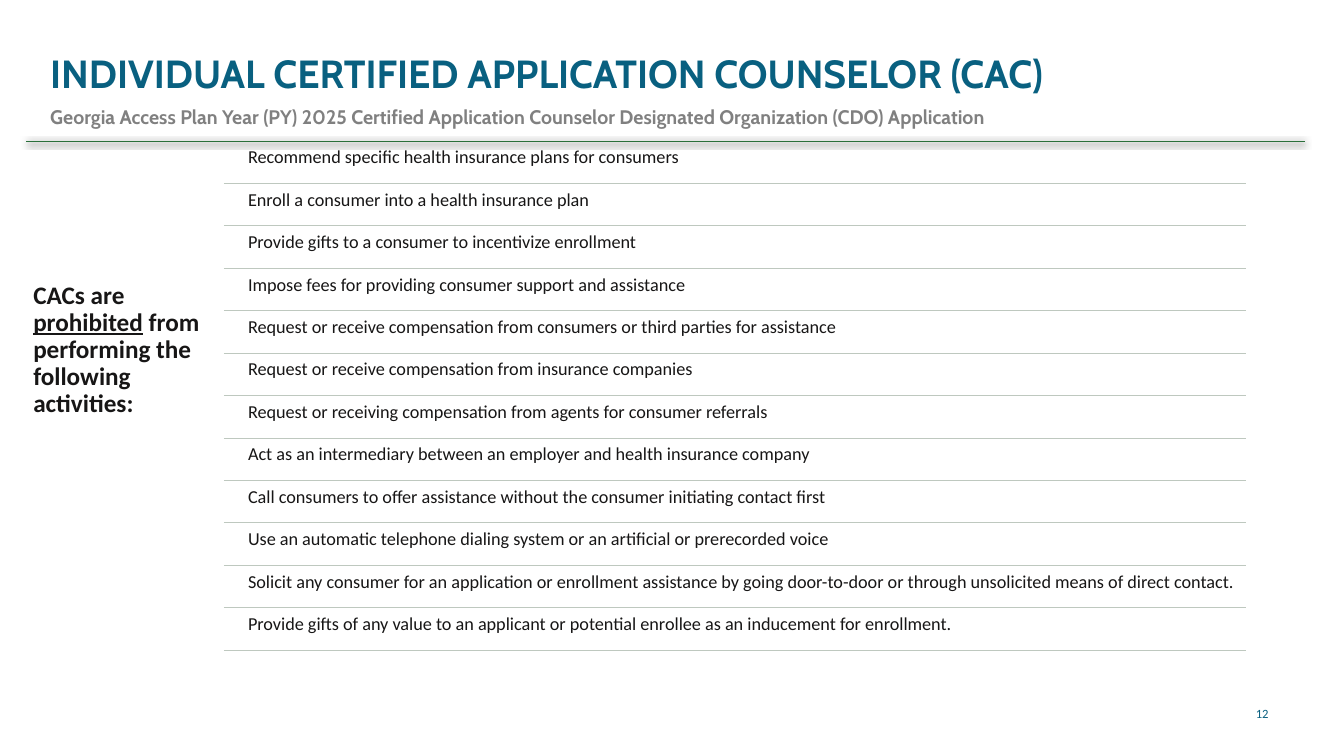
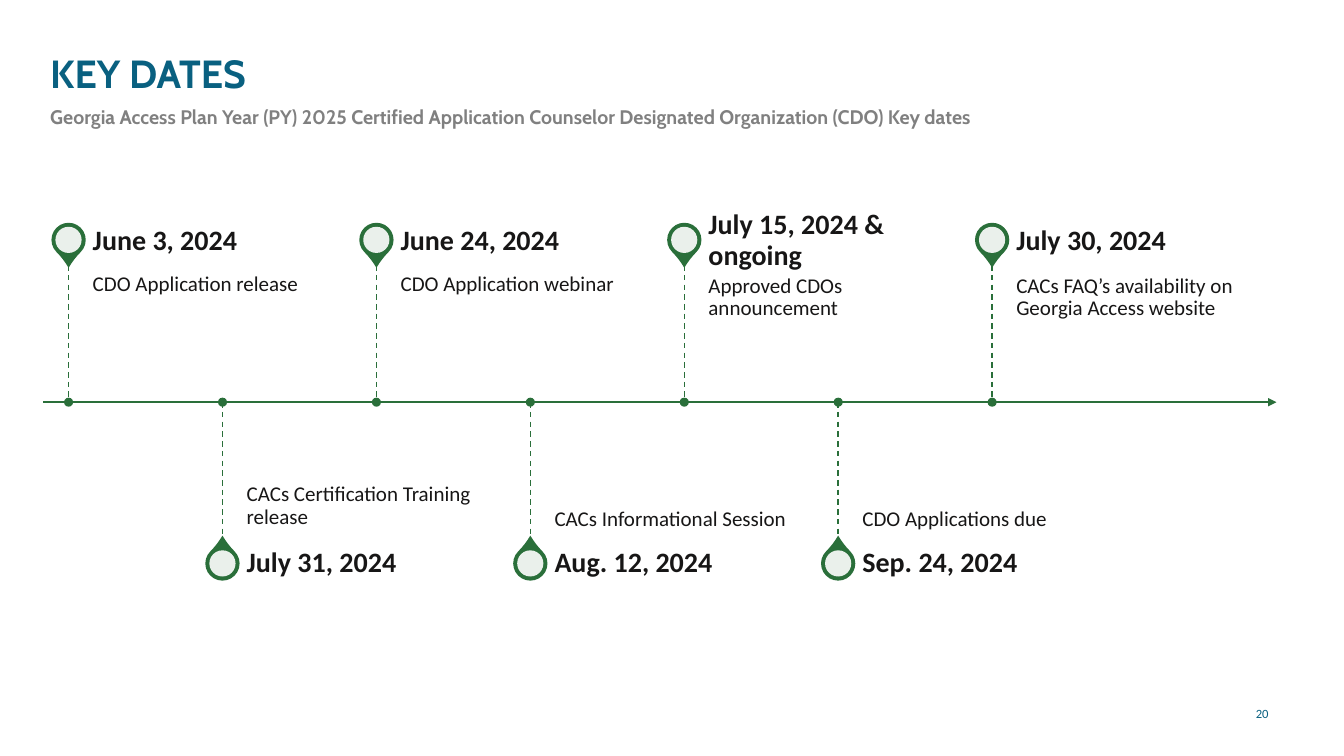
from lxml import etree
from pptx import Presentation
from pptx.dml.color import RGBColor
from pptx.enum.dml import MSO_LINE
from pptx.enum.shapes import MSO_CONNECTOR, MSO_SHAPE
from pptx.enum.text import MSO_ANCHOR, PP_ALIGN
from pptx.oxml.ns import qn
from pptx.util import Inches, Pt

TOP, MIDDLE, BOTTOM = MSO_ANCHOR.TOP, MSO_ANCHOR.MIDDLE, MSO_ANCHOR.BOTTOM
LEFT, RIGHT = PP_ALIGN.LEFT, PP_ALIGN.RIGHT
STRAIGHT, DASH = MSO_CONNECTOR.STRAIGHT, MSO_LINE.DASH
OVAL, TEAR = MSO_SHAPE.OVAL, MSO_SHAPE.TEAR

TEAL, GRAY, GREEN = "096080", "808080", "2A6F3A"
INK, PALE, WHITE = "171616", "BEC8BF", "FFFFFF"
HEAD, BODY = "Cabin", "Calibri"
INSET = (0.1, 0.05, 0.1, 0.05)

PLAN = "Georgia Access Plan Year (PY) 2025 Certified Application Counselor Designated Organization (CDO) "
BANS = [
    "Recommend specific health insurance plans for consumers",
    "Enroll a consumer into a health insurance plan",
    "Provide gifts to a consumer to incentivize enrollment",
    "Impose fees for providing consumer support and assistance",
    "Request or receive compensation from consumers or third parties for assistance",
    "Request or receive compensation from insurance companies",
    "Request or receiving compensation from agents for consumer referrals",
    "Act as an intermediary between an employer and health insurance company",
    "Call consumers to offer assistance without the consumer initiating contact first",
    "Use an automatic telephone dialing system or an artificial or prerecorded voice",
    "Solicit any consumer for an application or enrollment assistance by going "
    "door-to-door or through unsolicited means of direct contact.",
    "Provide gifts of any value to an applicant or potential enrollee as an "
    "inducement for enrollment.",
]
DATES = [
    ("June 3, 2024", "CDO Application release"),
    ("July 31, 2024", "CACs Certification Training release"),
    ("June 24, 2024", "CDO Application webinar"),
    ("Aug. 12, 2024", "CACs Informational Session"),
    ("July 15, 2024 & ongoing", "Approved CDOs announcement"),
    ("Sep. 24, 2024", "CDO Applications due"),
    ("July 30, 2024", "CACs FAQ’s availability on Georgia Access website"),
]
AXIS = 3.99
REACH = 1.36


def rgb(code):
    return RGBColor.from_string(code)


def add_text(slide, box, runs, size, color=INK, font=BODY, bold=False,
             anchor=TOP, inset=INSET, align=LEFT, lead=0.9):
    """Add a one-paragraph text box; runs are (text, underlined) pairs."""
    frame = slide.shapes.add_textbox(*map(Inches, box)).text_frame
    frame.word_wrap = True
    frame.vertical_anchor = anchor
    (frame.margin_left, frame.margin_top,
     frame.margin_right, frame.margin_bottom) = map(Inches, inset)
    para = frame.paragraphs[0]
    para.alignment = align
    para.line_spacing = lead
    for text, under in runs:
        run = para.add_run()
        run.text = text
        run.font.name = font
        run.font.size = Pt(size)
        run.font.bold = bold
        run.font.underline = under
        run.font.color.rgb = rgb(color)


def add_line(slide, start, end, color, width, dash=None):
    """Add a line and return it with its empty effect list."""
    line = slide.shapes.add_connector(STRAIGHT, *map(Inches, start + end))
    line.line.color.rgb = rgb(color)
    line.line.width = Pt(width)
    if dash:
        line.line.dash_style = dash
    effects = etree.SubElement(line._element.spPr, qn("a:effectLst"))
    return line, effects


def add_shade(effects):
    shade = etree.SubElement(effects, qn("a:outerShdw"), blurRad=str(Pt(4.5)),
                             dist=str(Pt(1.5)), dir="5400000", rotWithShape="0")
    black = etree.SubElement(shade, qn("a:srgbClr"), val="000000")
    etree.SubElement(black, qn("a:alpha"), val="63000")


def add_mark(slide, kind, x, y, size, color):
    """Add a borderless shape centred on x, y."""
    mark = slide.shapes.add_shape(
        kind, *map(Inches, (x - size / 2, y - size / 2, size, size)))
    mark.shadow.inherit = False
    mark.fill.solid()
    mark.fill.fore_color.rgb = rgb(color)
    mark.line.fill.background()
    return mark


def add_page(deck, title, topic, number):
    """Add a slide with its title, subtitle and page number."""
    slide = deck.slides.add_slide(deck.slide_layouts[6])
    add_text(slide, (0.4, 0.48, 12.27, 0.53), [(title, False)], 28, TEAL, HEAD,
             bold=True, anchor=BOTTOM)
    add_text(slide, (0.4, 1.02, 12.27, 0.53), [(PLAN + topic, False)], 14, GRAY,
             HEAD, bold=True)
    add_text(slide, (12, 6.89, 0.68, 0.38), [(str(number), False)], 9, TEAL,
             anchor=MIDDLE, align=RIGHT, lead=1.0)
    return slide


def add_bans(slide):
    _, effects = add_line(slide, (0.26, 1.4), (12.94, 1.4), GREEN, 0.5)
    add_shade(effects)
    add_text(slide, (0.26, 2.73, 1.95, 1.89),
             [("CACs are ", False), ("prohibited", True),
              (" from performing the following activities:", False)],
             18, bold=True, inset=(0.07,) * 4)
    first, last = 1.82, 6.45
    step = (last - first) / (len(BANS) - 1)
    for i, ban in enumerate(BANS):
        y = first + i * step
        add_text(slide, (2.41, y - 0.4, 9.95, 0.4), [(ban, False)], 13,
                 inset=(0.05,) * 4)
        add_line(slide, (2.22, y), (12.36, y), PALE, 0.5)


def add_date(slide, x, above, date, event):
    """Add one pin with its labels above or below the axis."""
    if above:
        tip, pin, turn = AXIS - REACH, 2.38, 135
        top, head, anchor = tip, tip - 0.48, TOP
        inset = (0, 0.1, 0.1, 0.16)
    else:
        tip, pin, turn = AXIS + REACH, 5.59, 315
        top, head, anchor = AXIS, tip, BOTTOM
        inset = (0, 0.16, 0, 0.1)
    drop = add_mark(slide, TEAR, x, pin, 0.34, GREEN)
    drop.adjustments[0] = 1.15
    drop.rotation = turn
    hole = add_mark(slide, OVAL, x, pin, 0.26, WHITE)
    tint = hole._element.spPr.find(".//" + qn("a:srgbClr"))
    etree.SubElement(tint, qn("a:alpha"), val="90000")
    add_text(slide, (x + 0.24, top, 2.54, REACH), [(event, False)], 15,
             anchor=anchor, inset=inset)
    add_text(slide, (x + 0.24, head, 2.54, 0.48), [(date, False)], 20, bold=True,
             anchor=MIDDLE, inset=(0, 0, 0.14, 0))
    add_line(slide, (x, min(tip, AXIS)), (x, max(tip, AXIS)), GREEN, 1, DASH)
    add_mark(slide, OVAL, x, AXIS, 0.09, GREEN)


def add_dates(slide):
    axis, _ = add_line(slide, (0.43, AXIS), (12.66, AXIS), GREEN, 1.5)
    etree.SubElement(axis.line._get_or_add_ln(), qn("a:tailEnd"), type="triangle")
    first, last = 0.68, 9.84
    step = (last - first) / (len(DATES) - 1)
    for i, (date, event) in enumerate(DATES):
        add_date(slide, first + i * step, i % 2 == 0, date, event)


def main():
    deck = Presentation()
    deck.slide_width, deck.slide_height = Inches(13.33), Inches(7.5)
    add_bans(add_page(deck, "INDIVIDUAL CERTIFIED APPLICATION COUNSELOR (CAC)",
                      "Application", 12))
    add_dates(add_page(deck, "KEY DATES", "Key dates", 20))
    deck.save("out.pptx")


if __name__ == "__main__":
    main()
